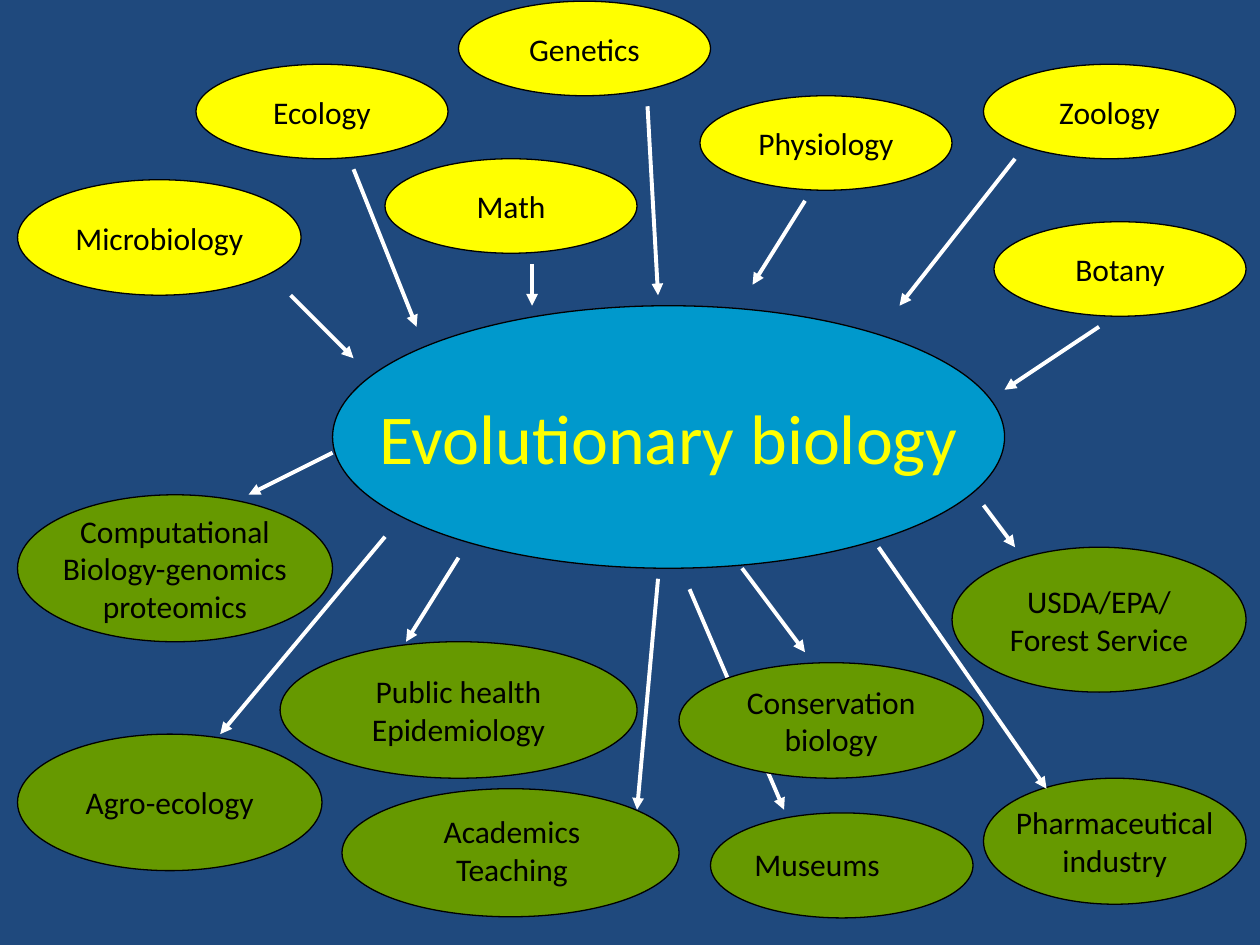
from lxml import etree
from pptx import Presentation
from pptx import util as u
from pptx.dml.color import RGBColor
from pptx.enum import shapes, text
from pptx.oxml.ns import qn

COLORS = {"back": "1F497D", "core": "0099CC", "source": "FFFF00",
          "use": "669900", "ink": "000000", "arrow": "FFFFFF"}

prs = Presentation()
prs.slide_width, prs.slide_height = u.Inches(10), u.Inches(7.5)
slide = prs.slides.add_slide(prs.slide_layouts[6])
slide.background.fill.solid()
slide.background.fill.fore_color.rgb = RGBColor.from_string(COLORS["back"])


def grid(col, row):
    """Slide position on a grid of twelfths of an inch with a small margin."""
    return u.Inches(0.056 + col / 12), u.Inches(0.01 + row / 12)


def write(sp, words, size=18, color="ink", align=text.PP_ALIGN.CENTER,
          anchor=text.MSO_ANCHOR.MIDDLE, wrap=False):
    tf = sp.text_frame
    tf.word_wrap = wrap
    tf.vertical_anchor = anchor
    for i, line in enumerate(words.split("\n")):
        p = tf.paragraphs[0] if i == 0 else tf.add_paragraph()
        p.alignment = align
        r = p.add_run()
        r.text = line
        r.font.name = "Calibri"
        r.font.size = u.Pt(size)
        r.font.color.rgb = RGBColor.from_string(COLORS[color])


# text, column, row, columns wide, rows high, fill
ellipses = [
    ("Evolutionary biology", 31, 29, 64, 25, "core"),
    ("Microbiology", 1, 17, 27, 11, "source"),
    ("Zoology", 93, 6, 24, 9, "source"),
    ("Ecology", 18, 6, 24, 9, "source"),
    ("Genetics", 43, 0, 24, 9, "source"),
    ("Physiology", 66, 9, 24, 9, "source"),
    ("Botany", 94, 21, 24, 9, "source"),
    ("Math", 36, 15, 24, 9, "source"),
    ("Agro-ecology", 1, 69.8, 29, 13, "use"),
    ("USDA/EPA/\nForest Service", 90, 52, 28, 13.8, "use"),
    ("Public health\nEpidemiology", 26, 61, 34, 13, "use"),
    ("", 31.9, 75, 32.1, 12.2, "use"),
    ("Conservation\nbiology", 64, 63, 29, 11, "use"),
    ("Pharmaceutical\nindustry", 93, 74, 25, 12, "use"),
    ("Computational\nBiology-genomics\nproteomics", 1, 47, 30, 14, "use"),
    ("", 67, 77.3, 25, 10, "use"),
]

# start column and row, end column and row
arrows = [
    (65, 56, 74, 77),  # to Museums, passing behind Conservation biology
    (27, 28, 33, 34), (33, 16, 39, 31), (61, 10, 62, 28), (50, 25, 50, 29),
    (76, 19, 71, 27), (96, 15, 85, 29), (104, 31, 95, 37),
    (36, 51, 20.3, 69.8), (62, 55, 60, 77), (70, 54, 76, 62),
    (43, 53, 38, 61), (83, 52, 99, 75), (93, 48, 96, 52), (31, 43, 23, 47),
]

for col, row, end_col, end_row in arrows:
    cx = slide.shapes.add_connector(shapes.MSO_CONNECTOR.STRAIGHT,
                                    *grid(col, row), *grid(end_col, end_row))
    cx.line.color.rgb = RGBColor.from_string(COLORS["arrow"])
    cx.line.width = u.Pt(2.25)
    etree.SubElement(cx.line._get_or_add_ln(), qn("a:tailEnd"), type="triangle")
    etree.SubElement(cx._element.spPr, qn("a:effectLst"))

# The ellipses go above the first arrow and below all the others
tree = slide.shapes._spTree
later_arrows = list(slide.shapes)[1:]

for words, col, row, wide, high, fill in ellipses:
    sp = slide.shapes.add_shape(shapes.MSO_SHAPE.OVAL, *grid(col, row),
                                u.Inches(wide / 12), u.Inches(high / 12))
    sp.shadow.inherit = False
    sp.fill.solid()
    sp.fill.fore_color.rgb = RGBColor.from_string(COLORS[fill])
    sp.line.color.rgb = RGBColor.from_string(COLORS["ink"])
    sp.line.width = u.Pt(0.75)
    if fill == "core":
        write(sp, words, size=40, color="source")
    elif words:
        write(sp, words)

for cx in later_arrows:
    tree.append(cx._element)

# Two ellipses carry their words in separate boxes
academics = slide.shapes.add_shape(shapes.MSO_SHAPE.RECTANGLE, *grid(38, 76.6),
                                   u.Inches(1.68), u.Inches(0.71))
academics.shadow.inherit = False
academics.fill.solid()
academics.fill.fore_color.rgb = RGBColor.from_string(COLORS["use"])
academics.line.fill.background()
write(academics, "Academics\nTeaching", anchor=text.MSO_ANCHOR.TOP, wrap=True)

museums = slide.shapes.add_textbox(*grid(70, 79.8), u.Inches(1.5), u.Inches(0.5))
write(museums, "Museums", align=text.PP_ALIGN.LEFT, anchor=text.MSO_ANCHOR.TOP)
# A box that does not wrap is centred on its text unless it wraps
museums.text_frame.word_wrap = True

prs.save("out.pptx")
